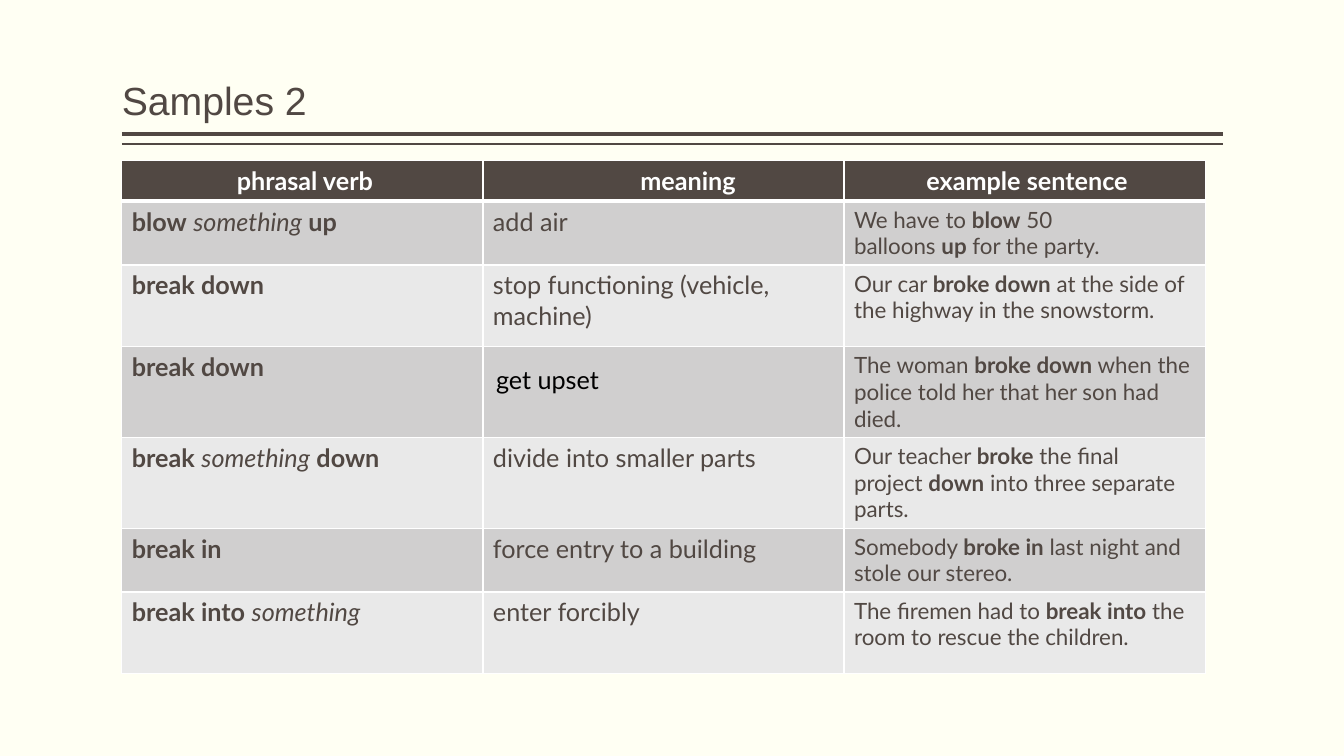
from dataclasses import dataclass

from lxml import etree
from pptx import Presentation
from pptx.dml.color import RGBColor
from pptx.enum.shapes import MSO_CONNECTOR
from pptx.enum.text import MSO_ANCHOR, PP_ALIGN
from pptx.oxml.ns import qn
from pptx.util import Cm, Pt

STRAIGHT = MSO_CONNECTOR.STRAIGHT
BOTTOM = MSO_ANCHOR.BOTTOM
CENTER = PP_ALIGN.CENTER
LEFT = PP_ALIGN.LEFT
NO_BREAK_SPACE = chr(160)


@dataclass(frozen=True)
class Theme:
    background: str = "FFFFF3"
    ink: str = "514843"
    white: str = "FFFFFF"
    black: str = "000000"
    bands: tuple = ("D0CFCF", "E9E9E9")
    title_font: str = "Arial"
    table_font: str = "Lato"
    title_size: int = 28
    body_size: int = 18
    example_size: int = 16


HEADERS = ["phrasal verb", "meaning", "example sentence"]
HEADER_MARGINS = [0.38, 1.49, 0.38]
ROW_HEIGHTS = [1, 1.6, 2.06, 2.28, 2.28, 1.6, 2.06]
COLUMN_WIDTH = 9.1
LEFT_EDGE, RULE_END = 3.07, 30.81

# *bold*, _italic_, ~ for a space that does not break
VERBS = [
    ("*blow*~_something_~*up*", "add air",
     "We have to~*blow*~50 balloons~*up*~for the party."),
    ("*break down*", "stop functioning (vehicle, machine)",
     "Our car~*broke down*~at the side of the highway in the snowstorm."),
    ("*break down*", "get upset",
     "The woman~*broke down*~when the police told her that her son had died."),
    ("*break*~_something_ *down*", "divide into smaller parts",
     "Our teacher~*broke*~the final project~*down*~into three separate parts."),
    ("*break in*", "force entry to a building",
     "Somebody~*broke in*~last night and stole our stereo."),
    ("*break into*~_something_", "enter forcibly",
     "The firemen had to *break into*~the room to rescue the children."),
]
UPSET_CELL = (3, 1)


def set_values(target, values):
    for name, value in values.items():
        setattr(target, name, value)


class SlideBuilder:
    def __init__(self, slide, theme):
        self.slide = slide
        self.theme = theme

    def background(self):
        fill = self.slide.background.fill
        fill.solid()
        fill.fore_color.rgb = RGBColor.from_string(self.theme.background)

    def add_runs(self, paragraph, text, font, size, color):
        """Add the marked-up text as bold, italic and plain runs."""
        text = text.replace("~", NO_BREAK_SPACE)
        for bold_index, chunk in enumerate(text.split("*")):
            for italic_index, piece in enumerate(chunk.split("_")):
                if not piece:
                    continue
                run = paragraph.add_run()
                run.text = piece
                set_values(run.font, {
                    "name": font, "size": Pt(size),
                    "bold": bold_index % 2 == 1,
                    "italic": italic_index % 2 == 1,
                })
                run.font.color.rgb = RGBColor.from_string(color)

    def title(self, text, left, top, width, height):
        box = self.slide.shapes.add_textbox(Cm(left), Cm(top), Cm(width), Cm(height))
        set_values(box.text_frame, {
            "word_wrap": True, "vertical_anchor": BOTTOM,
            "margin_left": 0, "margin_right": 0,
        })
        paragraph = box.text_frame.paragraphs[0]
        paragraph.line_spacing = 0.9
        self.add_runs(paragraph, text, self.theme.title_font,
                      self.theme.title_size, self.theme.ink)

    def rule(self, left, right, top, weight):
        line = self.slide.shapes.add_connector(
            STRAIGHT, Cm(left), Cm(top), Cm(right), Cm(top))
        line.line.color.rgb = RGBColor.from_string(self.theme.ink)
        line.line.width = Pt(weight)
        etree.SubElement(line._element.spPr, qn("a:effectLst"))

    def borders(self, cell, top, bottom):
        properties = cell._tc.get_or_add_tcPr()
        for side, weight in {"L": 1, "R": 1, "T": top, "B": bottom}.items():
            border = etree.SubElement(properties, qn(f"a:ln{side}"), w=str(Pt(weight)))
            fill = etree.SubElement(border, qn("a:solidFill"))
            etree.SubElement(fill, qn("a:srgbClr"), val=self.theme.white)

    def cell(self, cell, text, fill, size, color, alignment=LEFT, top=1, bottom=1):
        self.borders(cell, top, bottom)
        cell.fill.solid()
        cell.fill.fore_color.rgb = RGBColor.from_string(fill)
        paragraph = cell.text_frame.paragraphs[0]
        paragraph.alignment = alignment
        self.add_runs(paragraph, text, self.theme.table_font, size, color)

    def verb_table(self, left, top):
        theme = self.theme
        table = self.slide.shapes.add_table(
            len(ROW_HEIGHTS), len(HEADERS), Cm(left), Cm(top),
            Cm(COLUMN_WIDTH * len(HEADERS)), Cm(sum(ROW_HEIGHTS))).table
        table.horz_banding = False
        for column in table.columns:
            column.width = Cm(COLUMN_WIDTH)
        for row, height in zip(table.rows, ROW_HEIGHTS):
            row.height = Cm(height)

        for column, (header, margin) in enumerate(zip(HEADERS, HEADER_MARGINS)):
            header_cell = table.cell(0, column)
            self.cell(header_cell, f"*{header}*", theme.ink, theme.body_size,
                      theme.white, CENTER, bottom=3)
            header_cell.margin_left = Cm(margin)

        sizes = (theme.body_size, theme.body_size, theme.example_size)
        for row, texts in enumerate(VERBS, start=1):
            for column, (text, size) in enumerate(zip(texts, sizes)):
                color = theme.black if (row, column) == UPSET_CELL else theme.ink
                self.cell(table.cell(row, column), text, theme.bands[(row - 1) % 2],
                          size, color, top=3 if row == 1 else 1)

        upset = table.cell(*UPSET_CELL)
        sides = ("left", "top", "right", "bottom")
        set_values(upset, {f"margin_{side}": Cm(0.33) for side in sides})
        set_values(upset.text_frame.paragraphs[0], {
            "line_spacing": 1.15, "space_before": Pt(12), "space_after": Pt(12),
        })


def main():
    presentation = Presentation()
    presentation.slide_width = Cm(33.87)
    presentation.slide_height = Cm(19.05)
    slide = presentation.slides.add_slide(presentation.slide_layouts[6])
    builder = SlideBuilder(slide, Theme())
    builder.background()
    for top, weight in ((3.38, 3), (3.63, 1)):
        builder.rule(LEFT_EDGE, RULE_END, top, weight)
    builder.title("Samples 2", LEFT_EDGE, 0.2, RULE_END - LEFT_EDGE, 3.05)
    builder.verb_table(LEFT_EDGE, 4.05)
    presentation.save("out.pptx")


if __name__ == "__main__":
    main()
